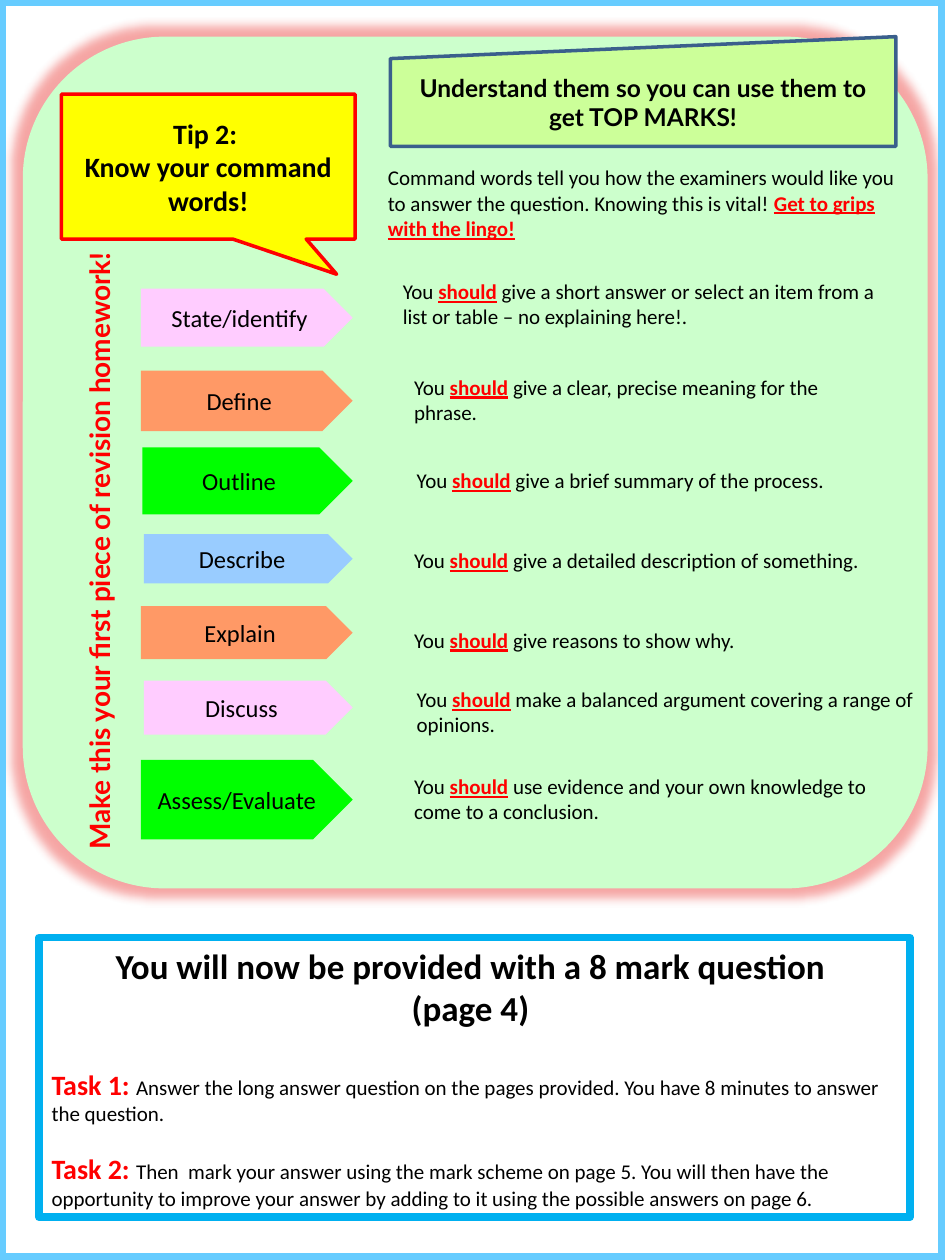
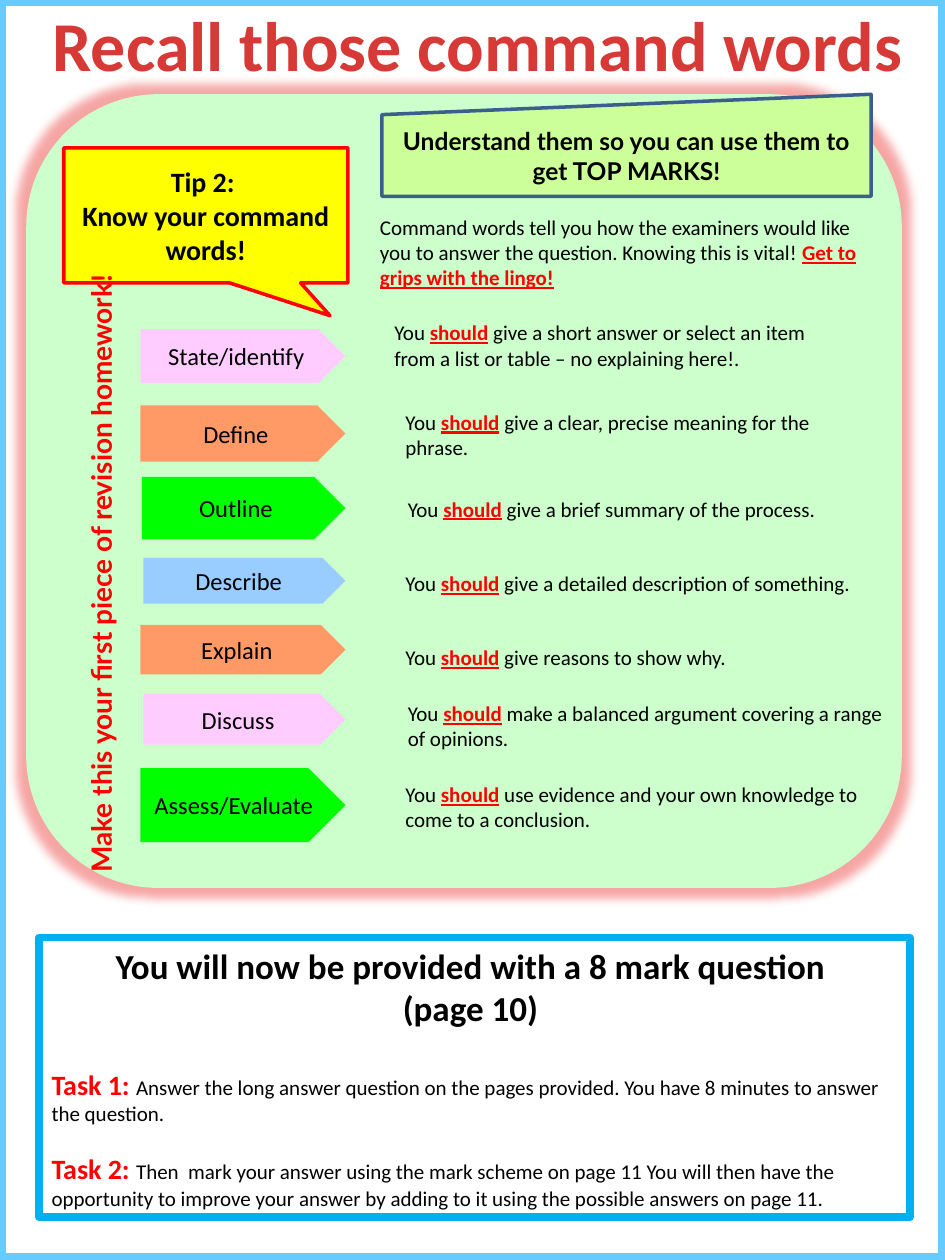
import pptx
import pptx.dml.color
import pptx.enum.shapes
import pptx.enum.text
import pptx.oxml
import pptx.util

Cm = pptx.util.Cm
Pt = pptx.util.Pt
RGBColor = pptx.dml.color.RGBColor
SHAPE = pptx.enum.shapes.MSO_SHAPE
ALIGN = pptx.enum.text.PP_ALIGN
ANCHOR = pptx.enum.text.MSO_ANCHOR

BLACK = RGBColor(0x00, 0x00, 0x00)
RED = RGBColor(0xFF, 0x00, 0x00)
YELLOW = RGBColor(0xFF, 0xFF, 0x00)
MINT = RGBColor(0xCC, 0xFF, 0xCC)
LIME = RGBColor(0xCC, 0xFF, 0x99)
NAVY = RGBColor(0x3A, 0x5F, 0x8C)
PINK = RGBColor(0xFF, 0xCC, 0xFF)
ORANGE = RGBColor(0xFF, 0x99, 0x66)
GREEN = RGBColor(0x00, 0xFF, 0x00)
BLUE = RGBColor(0x99, 0xCC, 0xFF)
SKY = RGBColor(0x66, 0xCC, 0xFF)
CYAN = RGBColor(0x00, 0xB0, 0xF0)
TITLE_RED = RGBColor(0xD7, 0x3A, 0x36)

GLOW = (
    '<a:glow xmlns:a="http://schemas.openxmlformats.org/drawingml/2006/main" rad="139700">'
    '<a:srgbClr val="E8201C"><a:alpha val="40000"/></a:srgbClr></a:glow>'
)

PANEL = (0.46, 0.74, 18.24, 17.17)
CALLOUT = (1.24, 1.9, 5.92, 2.92)
INTRO = (7.57, 3.2, 10.95, 1.8)
BANNER = (7.87, 0.74, 10.19, 2.21)
SIDE_NOTE = (-5.0, 10.64, 14.0, 0.94)
ARROW_RIGHT = 7.11

COMMANDS = [
    ("State/identify", PINK, (2.84, 5.82, 1.17), (7.87, 5.49, 10.03, 1.27),
     " give a short answer or select an item from a list or table – no explaining here!."),
    ("Define", ORANGE, (2.84, 7.47, 1.22), (8.1, 7.42, 9.6, 1.27),
     " give a clear, precise meaning for the phrase."),
    ("Outline", GREEN, (2.87, 9.02, 1.35), (8.15, 9.3, 10.06, 0.76),
     " give a brief summary of the process."),
    ("Describe", BLUE, (2.9, 10.77, 0.99), (8.1, 10.92, 10.64, 0.76),
     " give a detailed description of something."),
    ("Explain", ORANGE, (2.84, 12.22, 1.07), (8.1, 12.52, 10.64, 0.76),
     " give reasons to show why."),
    ("Discuss", PINK, (2.9, 13.72, 1.09), (8.15, 13.72, 10.64, 1.27),
     " make a balanced argument covering a range of opinions."),
    ("Assess/Evaluate", GREEN, (2.84, 15.32, 1.6), (8.1, 15.47, 10.64, 1.27),
     " use evidence and your own knowledge to come to a conclusion."),
]

PAGES = [
    (None, PANEL, "(page 4) ",
     "Then  mark your answer using the mark scheme on page 5. You will then have the "
     "opportunity to improve your answer by adding to it using the possible answers on page 6."),
    ("Recall those command words", (0.53, 1.9, 17.65, 16.0), "(page 10) ",
     "Then  mark your answer using the mark scheme on page 11 You will then have the "
     "opportunity to improve your answer by adding to it using the possible answers on page 11."),
]


def add_box(shapes, kind, area, fill=None, line=None, width=2):
    lengths = [Cm(value) for value in area]
    if kind is None:
        box = shapes.add_textbox(*lengths)
    else:
        box = shapes.add_shape(kind, *lengths)
        box.shadow.inherit = False
        box.text_frame.vertical_anchor = ANCHOR.MIDDLE
        if line is None:
            box.line.fill.background()
        else:
            box.line.color.rgb = line
            box.line.width = Pt(width)
    if fill is None:
        box.fill.background()
    else:
        box.fill.solid()
        box.fill.fore_color.rgb = fill
    box.text_frame.word_wrap = True
    return box


def write(box, paras, align=ALIGN.LEFT, font="Calibri"):
    for number, spans in enumerate(paras):
        para = box.text_frame.paragraphs[0] if number == 0 else box.text_frame.add_paragraph()
        para.alignment = align
        for text, size, color, bold, underline in spans:
            span = para.add_run()
            span.text = text
            span.font.name = font
            span.font.size = Pt(size)
            span.font.color.rgb = color
            span.font.bold = bold
            span.font.underline = underline


deck = pptx.Presentation()
deck.slide_width = Cm(19.05)
deck.slide_height = Cm(25.4)

for title, panel_area, page_note, second_task in PAGES:
    page = deck.slides.add_slide(deck.slide_layouts[5 if title else 6])
    shapes = page.shapes.add_group_shape().shapes if title else page.shapes

    scale_x = panel_area[2] / PANEL[2]
    scale_y = panel_area[3] / PANEL[3]
    areas = [PANEL, CALLOUT, INTRO, BANNER]
    areas += [(left, top, ARROW_RIGHT - left, height) for _, _, (left, top, height), _, _ in COMMANDS]
    areas += [meaning_area for _, _, _, meaning_area, _ in COMMANDS]
    placed = [
        (panel_area[0] + (left - PANEL[0]) * scale_x,
         panel_area[1] + (top - PANEL[1]) * scale_y,
         width * scale_x, height * scale_y)
        for left, top, width, height in areas
    ]

    panel = add_box(shapes, SHAPE.ROUNDED_RECTANGLE, placed[0], MINT)
    panel._element.spPr.find(pptx.oxml.ns.qn("a:effectLst")).append(pptx.oxml.parse_xml(GLOW))

    callout = add_box(shapes, SHAPE.RECTANGULAR_CALLOUT, placed[1], YELLOW, RED)
    callout.adjustments[0] = 0.437
    callout.adjustments[1] = 0.743
    write(callout, [[("Tip 2: ", 16, BLACK, True, False)],
                    [("Know your command words!", 16, BLACK, True, False)]], ALIGN.CENTER)

    intro = add_box(shapes, None, placed[2])
    write(intro, [[
        ("Command words tell you how the examiners would like you to answer the question. "
         "Knowing this is vital! ", 12, BLACK, False, False),
        ("Get to grips with the lingo!", 12, RED, True, True),
    ]])

    banner = add_box(shapes, SHAPE.FLOWCHART_MANUAL_INPUT, placed[3], LIME, NAVY)
    write(banner, [[("Understand them so you can use them to get TOP MARKS!", 14, BLACK, True, False)]],
          ALIGN.CENTER, "Lato")

    left, top, width, height = SIDE_NOTE
    center_x = panel_area[0] + (left + width / 2 - PANEL[0]) * scale_x
    center_y = panel_area[1] + (top + height / 2 - PANEL[1]) * scale_y
    width, height = width * scale_y, height * scale_x
    side_note = add_box(shapes, None, (center_x - width / 2, center_y - height / 2, width, height))
    side_note.rotation = 270
    write(side_note, [[("Make this your first piece of revision homework!", 16, RED, True, False)]],
          ALIGN.CENTER, "Lato")

    arrow_areas = placed[4:4 + len(COMMANDS)]
    meaning_areas = placed[4 + len(COMMANDS):]
    for (word, color, _, _, _), area in zip(COMMANDS, arrow_areas):
        arrow = add_box(shapes, SHAPE.PENTAGON, area, color)
        write(arrow, [[(word, 14, BLACK, False, False)]], ALIGN.CENTER)
    for (_, _, _, _, ending), area in zip(COMMANDS, meaning_areas):
        meaning = add_box(shapes, None, area)
        write(meaning, [[("You ", 12, BLACK, False, False), ("should", 12, RED, True, True),
                         (ending, 12, BLACK, False, False)]])

    border = add_box(page.shapes, SHAPE.FRAME, (0, 0, 19.05, 25.4), SKY, SKY)
    border.adjustments[0] = 0.005

    tasks = add_box(page.shapes, SHAPE.RECTANGLE, (0.79, 18.9, 17.55, 5.64), None, CYAN, 4.5)
    write(tasks, [
        [("You will now be provided with a 8 mark question ", 20, BLACK, True, False)],
        [(page_note, 20, BLACK, True, False)],
        [("Task 1: ", 16, RED, True, False),
         ("Answer the long answer question on the pages provided. "
          "You have 8 minutes to answer the question.", 12, BLACK, False, False)],
        [("Task 2: ", 16, RED, True, False), (second_task, 12, BLACK, False, False)],
    ])
    heading, heading_page, first, second = tasks.text_frame.paragraphs
    heading.alignment = heading_page.alignment = ALIGN.CENTER
    first.space_before = Pt(22)
    second.space_before = Pt(14.6)

    if title:
        box = page.shapes.title
        box.left, box.top, box.width, box.height = Cm(0.71), Cm(-0.1), Cm(17.83), Cm(1.96)
        box.text_frame.text = title
        box.text_frame.word_wrap = False
        box.text_frame.auto_size = pptx.enum.text.MSO_AUTO_SIZE.NONE
        box.text_frame.vertical_anchor = ANCHOR.MIDDLE
        para = box.text_frame.paragraphs[0]
        para.alignment = ALIGN.CENTER
        span = para.runs[0]
        span.font.name = "Calibri"
        span.font.size = Pt(40)
        span.font.bold = True
        span.font.color.rgb = TITLE_RED

deck.save("out.pptx")
